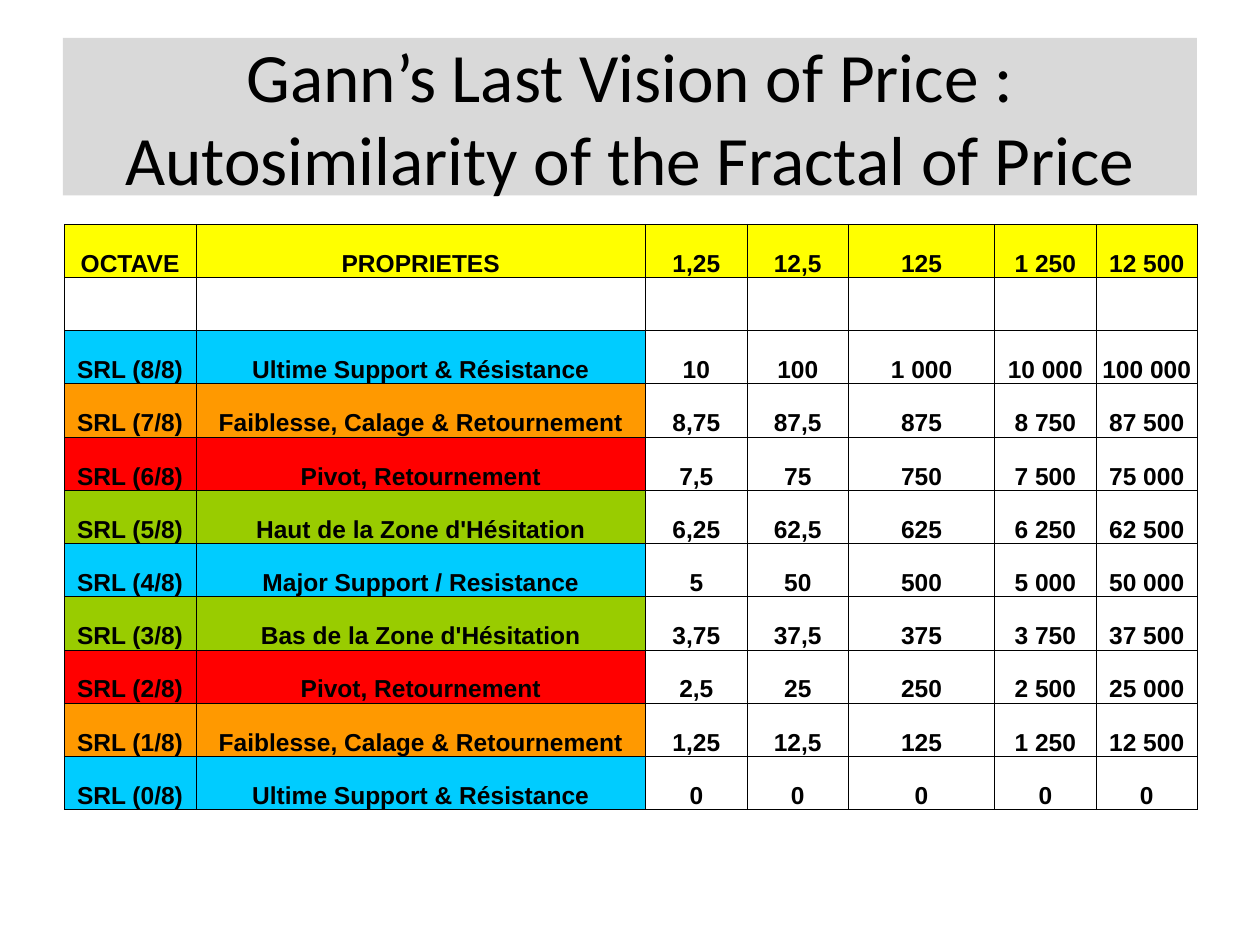
"""Builds the slide on the fractal of price: a title band and a table of octaves."""
from dataclasses import dataclass

from lxml import etree
from pptx import Presentation
from pptx.dml.color import RGBColor
from pptx.enum.shapes import MSO_SHAPE
from pptx.enum.text import MSO_ANCHOR, PP_ALIGN
from pptx.oxml.ns import qn
from pptx.util import Inches, Pt

RECTANGLE = MSO_SHAPE.RECTANGLE
CENTER = PP_ALIGN.CENTER
MIDDLE, BOTTOM = MSO_ANCHOR.MIDDLE, MSO_ANCHOR.BOTTOM

WIDTH, HEIGHT = Inches(10), Inches(7.5)
COL, ROW = WIDTH / 20, HEIGHT / 25


@dataclass(frozen=True)
class Theme:
    text: str = "000000"
    band: str = "D9D9D9"
    header: str = "FFFF00"
    blue: str = "00CCFF"
    orange: str = "FF9900"
    red: str = "FF0000"
    green: str = "99CC00"
    title_font: str = "Calibri"
    table_font: str = "Arial"
    title_size: float = 39.6
    table_size: float = 14
    border: float = 0.5


@dataclass(frozen=True)
class Box:
    col: float
    row: float
    cols: float
    rows: float

    def emu(self) -> tuple[int, int, int, int]:
        return (round(self.col * COL), round(self.row * ROW),
                round(self.cols * COL), round(self.rows * ROW))


@dataclass(frozen=True)
class Level:
    eighths: int
    label: str
    color: str


THEME = Theme()
TITLE = "Gann’s Last Vision of Price :\vAutosimilarity of the Fractal of Price"
TITLE_BOX = Box(1, 1, 18, 4.17)
TABLE_BOX = Box(1.02, 5.93, 18, 15.5)
COLUMNS = (2.09, 7.14, 1.61, 1.61, 2.32, 1.61, 1.61)
STEPS = (1.25, 12.5, 125, 1250, 12500)
LEVELS = (
    Level(8, "Ultime Support & Résistance", THEME.blue),
    Level(7, "Faiblesse, Calage & Retournement", THEME.orange),
    Level(6, "Pivot, Retournement", THEME.red),
    Level(5, "Haut de la Zone d'Hésitation", THEME.green),
    Level(4, "Major Support / Resistance", THEME.blue),
    Level(3, "Bas de la Zone d'Hésitation", THEME.green),
    Level(2, "Pivot, Retournement", THEME.red),
    Level(1, "Faiblesse, Calage & Retournement", THEME.orange),
    Level(0, "Ultime Support & Résistance", THEME.blue),
)


def rgb(color: str) -> RGBColor:
    return RGBColor.from_string(color)


def price(value: float) -> str:
    return f"{value:,.10g}".replace(",", " ").replace(".", ",")


def style(p, font: str, size: float, bold: bool) -> None:
    p.alignment = CENTER
    p.font.name, p.font.size, p.font.bold = font, Pt(size), bold
    p.font.color.rgb = rgb(THEME.text)


def add_title(s) -> None:
    sp = s.shapes.add_shape(RECTANGLE, *TITLE_BOX.emu())
    sp.shadow.inherit = False
    sp.fill.solid()
    sp.fill.fore_color.rgb = rgb(THEME.band)
    sp.line.fill.background()
    tf = sp.text_frame
    tf.word_wrap, tf.vertical_anchor = True, MIDDLE
    p = tf.paragraphs[0]
    p.text = TITLE
    style(p, THEME.title_font, THEME.title_size, False)


def add_borders(cell) -> None:
    props = cell._tc.get_or_add_tcPr()
    for side in ("a:lnL", "a:lnR", "a:lnT", "a:lnB"):
        line = etree.SubElement(props, qn(side), w=str(Pt(THEME.border)))
        fill = etree.SubElement(line, qn("a:solidFill"))
        etree.SubElement(fill, qn("a:srgbClr"), val=THEME.text)


def fill_cell(cell, text: str, color: str | None) -> None:
    add_borders(cell)
    if color:
        cell.fill.solid()
        cell.fill.fore_color.rgb = rgb(color)
    else:
        cell.fill.background()
    cell.margin_left = cell.margin_right = cell.margin_top = Inches(0.01)
    cell.margin_bottom = 0
    cell.vertical_anchor = BOTTOM
    p = cell.text_frame.paragraphs[0]
    if text:
        p.text = text
    style(p, THEME.table_font, THEME.table_size, True)


def table_rows() -> list[tuple[list[str], list[str | None]]]:
    """Pairs the texts of each row with the fills of its cells."""
    n = len(COLUMNS)
    rows = [(["OCTAVE", "PROPRIETES", *map(price, STEPS)], [THEME.header] * n),
            ([""] * n, [None] * n)]
    for level in LEVELS:
        prices = [price(step * level.eighths) for step in STEPS]
        rows.append(([f"SRL ({level.eighths}/8)", level.label, *prices],
                     [level.color] * 2 + [None] * len(STEPS)))
    return rows


def add_octaves(s) -> None:
    rows = table_rows()
    table = s.shapes.add_table(len(rows), len(COLUMNS), *TABLE_BOX.emu()).table
    table.first_row = table.horz_banding = False
    for column, cols in zip(table.columns, COLUMNS):
        column.width = round(cols * COL)
    for row, (texts, colors) in zip(table.rows, rows):
        row.height = round(TABLE_BOX.rows * ROW / len(rows))
        for cell, text, color in zip(row.cells, texts, colors):
            fill_cell(cell, text, color)


def main() -> None:
    prs = Presentation()
    prs.slide_width, prs.slide_height = WIDTH, HEIGHT
    s = prs.slides.add_slide(prs.slide_layouts[6])
    add_title(s)
    add_octaves(s)
    prs.save("out.pptx")


if __name__ == "__main__":
    main()
